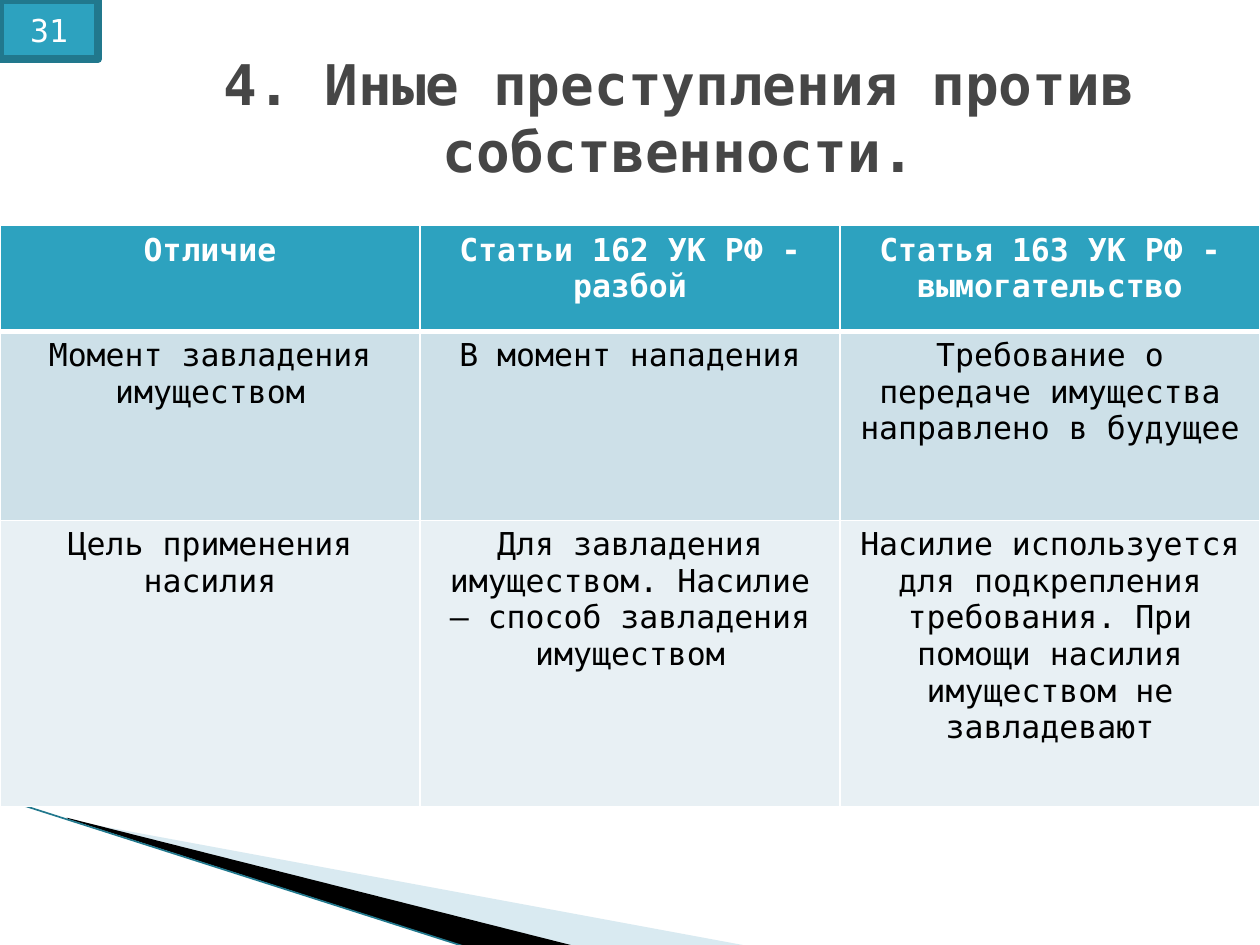
import pptx
import pptx.util
import pptx.dml.color
import pptx.enum.shapes
import pptx.enum.text
import pptx.oxml
import pptx.oxml.ns

Inches, Pt = pptx.util.Inches, pptx.util.Pt
MIDDLE = pptx.enum.text.MSO_ANCHOR.MIDDLE
FONT = "DejaVu Sans Mono"
COLORS = {
    "teal": "2DA2BF", "edge": "21788D", "pale": "A0CBDC", "black": "000000",
    "white": "FFFFFF", "title": "464646", "band1": "CDE0E8", "band2": "E8F0F4",
}

TITLE = "4. Иные преступления против собственности."
NUMBER = "31"
ROWS = [
    ("Отличие", "Статьи 162 УК РФ - разбой", "Статья 163 УК РФ - вымогательство"),
    ("Момент завладения имуществом", "В момент нападения",
     "Требование о передаче имущества направлено в будущее"),
    ("Цель применения насилия",
     "Для завладения имуществом. Насилие – способ завладения имуществом",
     "Насилие используется для подкрепления требования. "
     "При помощи насилия имуществом не завладевают"),
]
HEIGHTS = [0.84, 1.5, 2.27]
FILLS = ["teal", "band1", "band2"]
WEDGES = [  # frame, corners, colour, opacity in percent
    ((0.78, 5.47, 4.16, 1.58),
     [(0.55, 6.51), (5.95, 7.51), (4.56, 7.51), (0.55, 6.5)], "pale", 40),
    ((-0.06, 6.33, 4.16, 0.92),
     [(0.53, 6.49), (4.57, 7.51), (3.72, 7.52), (0.54, 6.5)], "black", 100),
]


def rgb(name):
    return pptx.dml.color.RGBColor.from_string(COLORS[name])


def paint(shape, color):
    shape.fill.solid()
    shape.fill.fore_color.rgb = rgb(color)


def write(frame, text, size, color, bold=False):
    frame.text = text
    para = frame.paragraphs[0]
    para.alignment = pptx.enum.text.PP_ALIGN.CENTER
    font = para.runs[0].font
    font.name, font.size, font.bold = FONT, Pt(size), bold
    font.color.rgb = rgb(color)


def border(cell, widths):
    """Give the cell white borders; widths are points for left, right, top, bottom."""
    props = cell._tc.get_or_add_tcPr()
    for spot, (side, width) in enumerate(zip("LRTB", widths)):
        props.insert(spot, pptx.oxml.parse_xml(
            f'<a:ln{side} {pptx.oxml.ns.nsdecls("a")} w="{Pt(width)}"><a:solidFill>'
            f'<a:srgbClr val="{COLORS["white"]}"/></a:solidFill></a:ln{side}>'))


def reframe(shape, frame):
    """Change the frame of a freeform and leave its outline where it is."""
    left, top, width, height = map(Inches, frame)
    outline = shape._element.spPr.find(".//" + pptx.oxml.ns.qn("a:path"))
    for point in outline.iter(pptx.oxml.ns.qn("a:pt")):
        point.set("x", str(int(point.get("x")) + shape.left - left))
        point.set("y", str(int(point.get("y")) + shape.top - top))
    outline.set("w", str(width))
    outline.set("h", str(height))
    shape.left, shape.top, shape.width, shape.height = left, top, width, height


def add_wedge(slide, frame, points, color, alpha):
    (left, top), *rest = [(Inches(x), Inches(y)) for x, y in points]
    pen = slide.shapes.build_freeform(left, top)
    pen.add_line_segments(rest, close=True)
    shape = pen.convert_to_shape()
    reframe(shape, frame)
    shape.shadow.inherit = False
    paint(shape, color)
    shape.line.fill.background()
    if alpha < 100:
        tint = shape._element.spPr.find(".//" + pptx.oxml.ns.qn("a:srgbClr"))
        tint.append(pptx.oxml.parse_xml(
            f'<a:alpha {pptx.oxml.ns.nsdecls("a")} val="{alpha * 1000}"/>'))


def add_edge(slide):
    line = slide.shapes.add_connector(
        pptx.enum.shapes.MSO_CONNECTOR.STRAIGHT,
        Inches(-0.01), Inches(6.33), Inches(3.71), Inches(7.52))
    line.line.color.rgb = rgb("edge")
    line.line.width = Pt(0.95)
    line._element.spPr.append(pptx.oxml.parse_xml(
        f'<a:effectLst {pptx.oxml.ns.nsdecls("a")}/>'))


def add_grid(slide):
    table = slide.shapes.add_table(
        len(ROWS), len(ROWS[0]), 0, Inches(1.79),
        Inches(10), Inches(sum(HEIGHTS))).table
    for r, texts in enumerate(ROWS):
        table.rows[r].height = Inches(HEIGHTS[r])
        head = r == 0
        for c, text in enumerate(texts):
            cell = table.cell(r, c)
            paint(cell, FILLS[r])
            write(cell.text_frame, text, 18, "white" if head else "black", head)
            border(cell, (1, 1, 3 if r == 1 else 1, 3 if head else 1))


def add_title(slide):
    title = slide.shapes.title
    title.left, title.top = Inches(0.78), Inches(0.3)
    title.width, title.height = Inches(9.22), Inches(1.25)
    title.text_frame.vertical_anchor = MIDDLE
    write(title.text_frame, TITLE, 32, "title", True)


def add_badge(slide):
    badge = slide.shapes.add_shape(
        pptx.enum.shapes.MSO_SHAPE.RECTANGLE, 0, 0, Inches(0.78), Inches(0.47))
    badge.shadow.inherit = False
    paint(badge, "teal")
    badge.line.color.rgb = rgb("edge")
    badge.line.width = Pt(4.33)
    badge.text_frame.vertical_anchor = MIDDLE
    write(badge.text_frame, NUMBER, 18, "white")


def main():
    deck = pptx.Presentation()
    deck.slide_width, deck.slide_height = Inches(10), Inches(7.5)
    slide = deck.slides.add_slide(deck.slide_layouts[5])
    for wedge in WEDGES:
        add_wedge(slide, *wedge)
    add_edge(slide)
    add_grid(slide)
    add_title(slide)
    add_badge(slide)
    deck.save("out.pptx")


if __name__ == "__main__":
    main()
